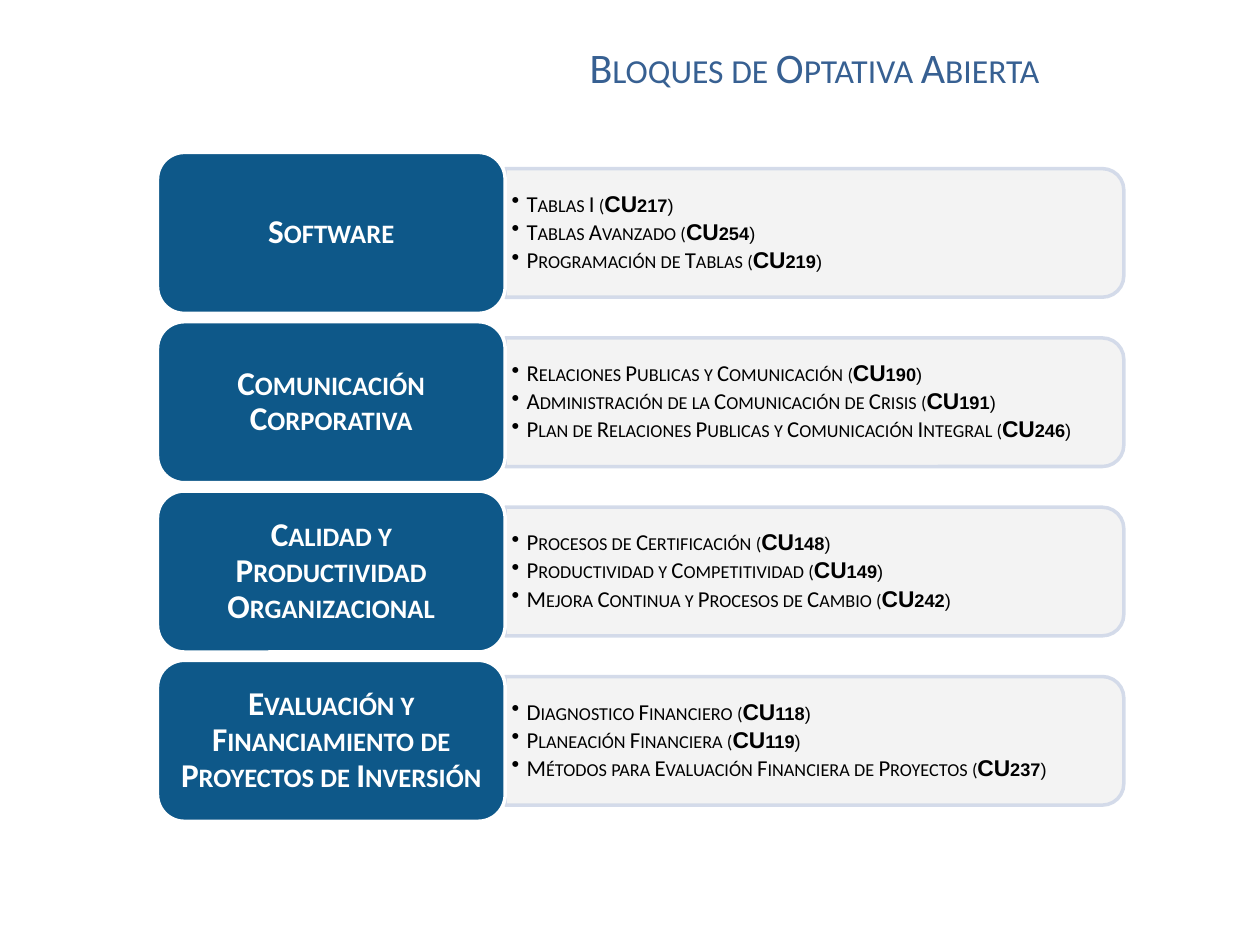
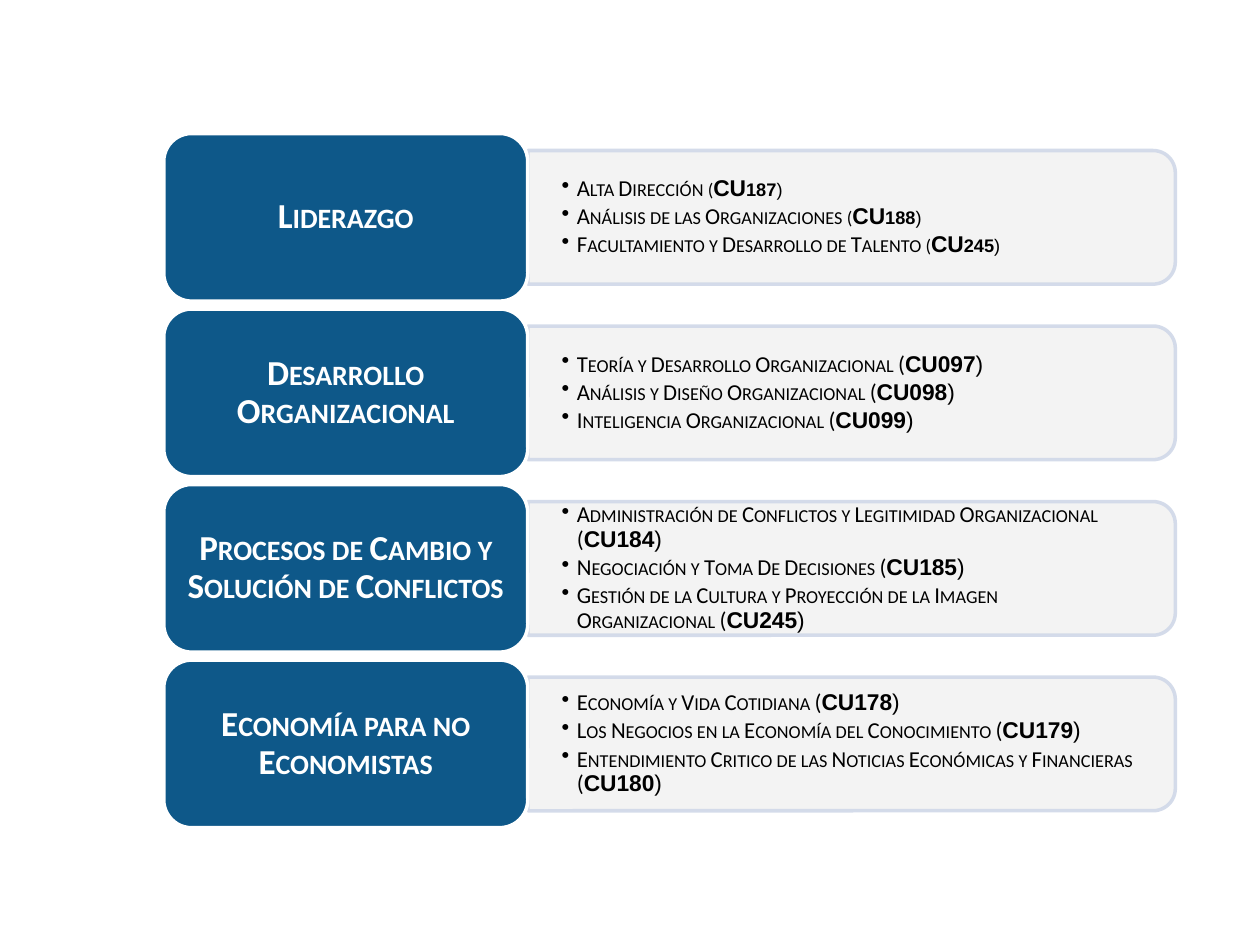
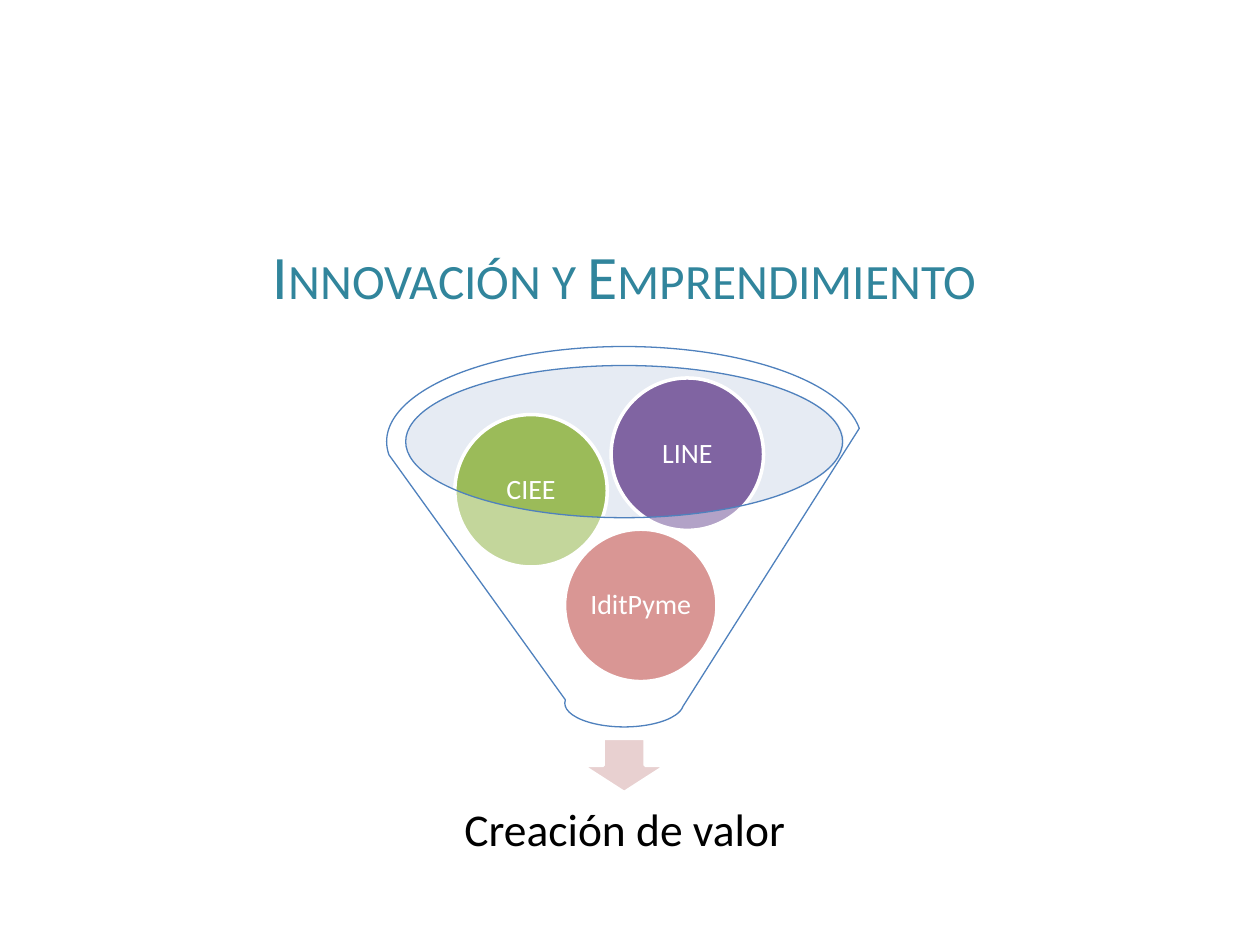
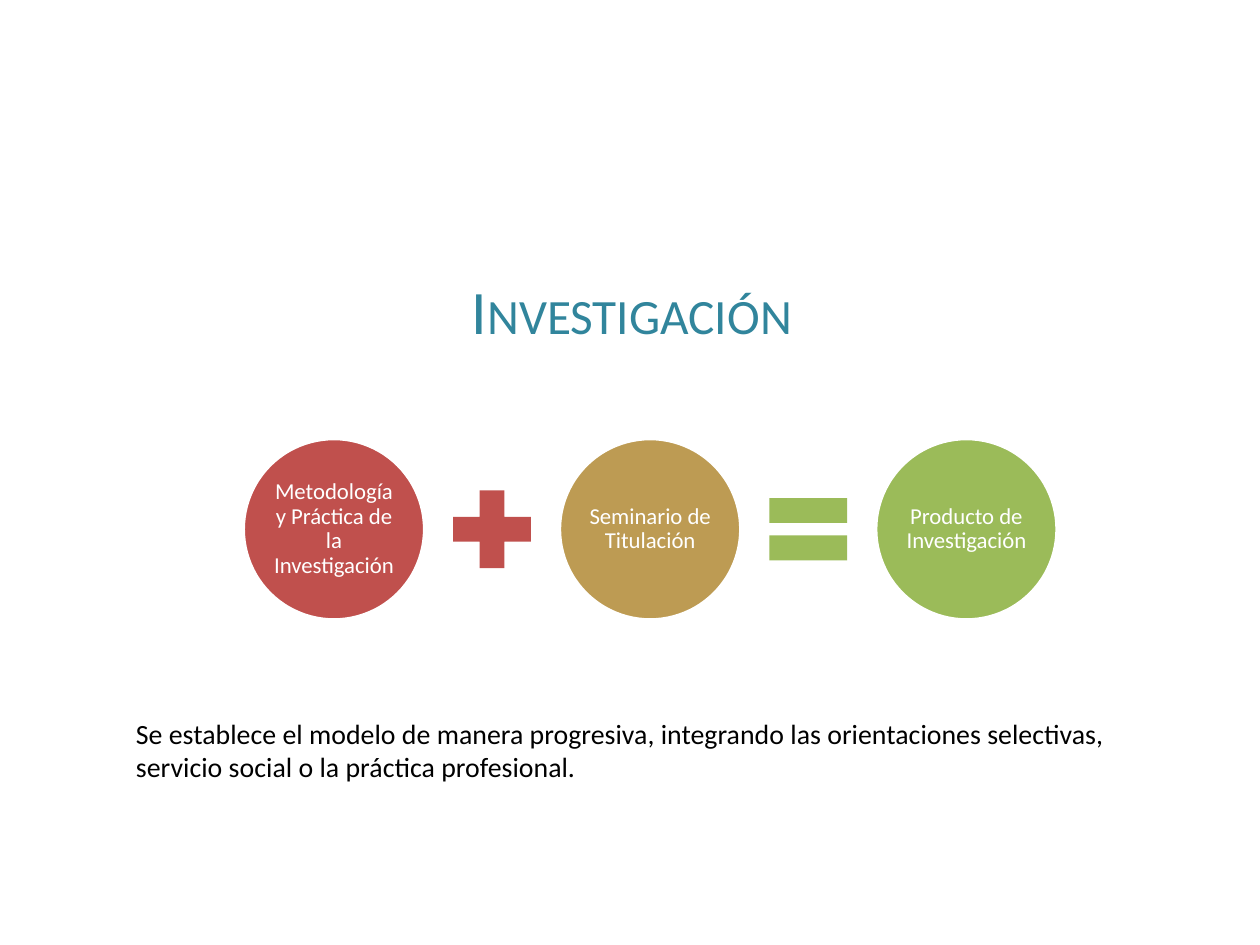
from dataclasses import dataclass
from typing import Optional

from lxml.etree import SubElement
from pptx import Presentation
from pptx.dml.color import RGBColor
from pptx.enum.shapes import MSO_SHAPE
from pptx.enum.text import MSO_ANCHOR, MSO_AUTO_SIZE, PP_ALIGN
from pptx.oxml.ns import qn
from pptx.util import Pt

COLORS = {
    "white": "FFFFFF",
    "black": "000000",
    "navy": "0E5889",
    "panel": "F2F2F2",
    "panel_edge": "D0D8E8",
    "title_blue": "376092",
    "title_teal": "31859C",
    "funnel_mouth": "C2CDE1",
    "funnel_edge": "4F81BD",
    "arrow": "E8D0D0",
    "red": "C0504D",
    "green": "9BBB59",
    "purple": "8064A2",
    "gold": "BD9B53",
}
TITLE_ONLY, BLANK = 5, 6
INDENT = 8.64


@dataclass(frozen=True)
class Box:
    left: float
    top: float
    width: float
    height: float

    def points(self) -> tuple:
        return Pt(self.left), Pt(self.top), Pt(self.width), Pt(self.height)


@dataclass(frozen=True)
class Paint:
    fill: str
    line: Optional[str] = None
    weight: float = 2
    opacity: int = 100
    line_opacity: int = 100


@dataclass(frozen=True)
class Font:
    size: float
    color: str
    bold: bool = False
    small_caps: bool = False
    name: str = "Calibri"


@dataclass(frozen=True)
class Block:
    heading: str
    courses: tuple
    small_codes: bool = True


@dataclass(frozen=True)
class BlockGrid:
    left: float
    top: float
    pitch: float
    heading_width: float
    heading_height: float
    panel_width: float
    panel_height: float
    list_width: float
    list_height: float
    inset_x: float
    inset_y: float
    heading_size: float


@dataclass(frozen=True)
class Circle:
    text: str
    left: float
    top: float
    color: str


OPEN_GRID = BlockGrid(90, 87.1, 96.75, 198.7, 92, 353.5, 73.5, 350, 66.3, 3.6, 2.2, 19)
SECOND_GRID = BlockGrid(93.6, 76.3, 100.3, 208, 95.8, 370, 76.4, 366.5, 69.1, 19.4, 10, 20)

OPEN_BLOCKS = (
    Block("Software", (
        ("Tablas I", "CU217"),
        ("Tablas Avanzado", "CU254"),
        ("Programación de Tablas", "CU219"),
    )),
    Block("Comunicación Corporativa", (
        ("Relaciones Publicas y Comunicación", "CU190"),
        ("Administración de la Comunicación de Crisis", "CU191"),
        ("Plan de Relaciones Publicas y Comunicación Integral", "CU246"),
    )),
    Block("Calidad y Productividad Organizacional", (
        ("Procesos de Certificación", "CU148"),
        ("Productividad y Competitividad", "CU149"),
        ("Mejora Continua y Procesos de Cambio", "CU242"),
    )),
    Block("Evaluación y Financiamiento de Proyectos de Inversión", (
        ("Diagnostico Financiero", "CU118"),
        ("Planeación Financiera", "CU119"),
        ("Métodos para Evaluación Financiera de Proyectos", "CU237"),
    )),
)
SECOND_BLOCKS = (
    Block("Liderazgo", (
        ("Alta Dirección", "CU187"),
        ("Análisis de las Organizaciones", "CU188"),
        ("Facultamiento y Desarrollo de Talento", "CU245"),
    )),
    Block("Desarrollo Organizacional", (
        ("Teoría y Desarrollo Organizacional", "CU097"),
        ("Análisis y Diseño Organizacional", "CU098"),
        ("Inteligencia Organizacional", "CU099"),
    ), small_codes=False),
    Block("Procesos de Cambio y Solución de Conflictos", (
        ("Administración de Conflictos y Legitimidad Organizacional", "CU184"),
        ("Negociación y Toma De Decisiones", "CU185"),
        ("Gestión de la Cultura y Proyección de la Imagen Organizacional", "CU245"),
    ), small_codes=False),
    Block("Economía para no Economistas", (
        ("Economía y Vida Cotidiana", "CU178"),
        ("Los Negocios en la Economía del Conocimiento", "CU179"),
        ("Entendimiento Critico de las Noticias Económicas y Financieras", "CU180"),
    ), small_codes=False),
)
FUNNEL_CIRCLES = (
    Circle("IditPyme", 322.6, 302.4, "red"),
    Circle("CIEE", 259.9, 236.9, "green"),
    Circle("LINE", 349.2, 216, "purple"),
)
RESEARCH_STEPS = (
    ("Metodología y Práctica de la Investigación", "red"),
    ("Seminario de Titulación", "gold"),
    ("Producto de Investigación", "green"),
)
OPERATORS = ((MSO_SHAPE.MATH_PLUS, "red"), (MSO_SHAPE.MATH_EQUAL, "green"))


def rgb(name: str) -> RGBColor:
    return RGBColor.from_string(COLORS[name])


def fade(parent, percent: int) -> None:
    if percent < 100:
        color = parent.find(qn("a:solidFill")).find(qn("a:srgbClr"))
        SubElement(color, qn("a:alpha"), val=str(percent * 1000))


def draw_shape(page, kind, box: Box, paint: Paint):
    shape = page.shapes.add_shape(kind, *box.points())
    shape.shadow.inherit = False
    shape.fill.solid()
    shape.fill.fore_color.rgb = rgb(paint.fill)
    properties = shape._element.spPr
    fade(properties, paint.opacity)
    if paint.line is None:
        shape.line.fill.background()
    else:
        shape.line.color.rgb = rgb(paint.line)
        shape.line.width = Pt(paint.weight)
        fade(properties.find(qn("a:ln")), paint.line_opacity)
    return shape


def format_span(span, font: Font) -> None:
    span.font.name = font.name
    span.font.size = Pt(font.size)
    span.font.bold = font.bold
    span.font.color.rgb = rgb(font.color)
    if font.small_caps:
        span._r.get_or_add_rPr().set("cap", "small")


def prepare_frame(frame, inset_x: float, inset_y: float, anchor=MSO_ANCHOR.MIDDLE) -> None:
    frame.word_wrap = True
    frame.auto_size = MSO_AUTO_SIZE.NONE
    frame.vertical_anchor = anchor
    frame.margin_left = frame.margin_right = Pt(inset_x)
    frame.margin_top = frame.margin_bottom = Pt(inset_y)


def write_text(shape, text: str, font: Font, inset_x: float, inset_y: float,
               spacing: float = 0.9) -> None:
    frame = shape.text_frame
    prepare_frame(frame, inset_x, inset_y)
    frame.text = text
    para = frame.paragraphs[0]
    para.alignment = PP_ALIGN.CENTER
    para.line_spacing = spacing
    format_span(para.runs[0], font)


def set_title(page, text: str, box: Box, font: Font, top_inset: float = 3.6) -> None:
    title = page.shapes.title
    title.left, title.top, title.width, title.height = box.points()
    write_text(title, text, font, 7.2, 3.6, 1.0)
    title.text_frame.margin_top = Pt(top_inset)


def write_course(para, name: str, code: str, small_codes: bool) -> None:
    properties = para._p.get_or_add_pPr()
    properties.set("marL", str(Pt(INDENT)))
    properties.set("indent", str(-Pt(INDENT)))
    SubElement(properties, qn("a:buChar"), char="•")
    para.line_spacing = 0.9
    para.space_after = Pt(2)
    pieces = (
        (f"{name} ", Font(13, "black", small_caps=True)),
        ("(", Font(13, "black", small_caps=small_codes)),
        (code, Font(13, "black", True, small_codes, "Arial")),
        (")", Font(13, "black", False, small_codes, "Arial")),
    )
    for text, font in pieces:
        span = para.add_run()
        span.text = text
        format_span(span, font)


def draw_block(page, block: Block, grid: BlockGrid, top: float) -> None:
    middle = top + grid.heading_height / 2
    panel_left = grid.left + grid.heading_width
    panel = draw_shape(
        page, MSO_SHAPE.ROUND_2_SAME_RECTANGLE,
        Box(panel_left + (grid.panel_width - grid.panel_height) / 2,
            middle - grid.panel_width / 2, grid.panel_height, grid.panel_width),
        Paint("panel", "panel_edge", opacity=90, line_opacity=90))
    panel.rotation = 90
    list_box = Box(panel_left, middle - grid.list_height / 2, grid.list_width, grid.list_height)
    frame = page.shapes.add_textbox(*list_box.points()).text_frame
    prepare_frame(frame, grid.inset_x, grid.inset_y)
    for index, (name, code) in enumerate(block.courses):
        para = frame.add_paragraph() if index else frame.paragraphs[0]
        write_course(para, name, code, block.small_codes)
    heading = draw_shape(
        page, MSO_SHAPE.ROUNDED_RECTANGLE,
        Box(grid.left, top, grid.heading_width, grid.heading_height), Paint("navy", "white"))
    write_text(heading, block.heading, Font(grid.heading_size, "white", True, True), 5.8, 2.9)


def draw_blocks(page, blocks: tuple, grid: BlockGrid) -> None:
    for index, block in enumerate(blocks):
        draw_block(page, block, grid, grid.top + index * grid.pitch)


def draw_circle(page, circle: Circle, diameter: float, size: float) -> None:
    shape = draw_shape(page, MSO_SHAPE.OVAL,
                       Box(circle.left, circle.top, diameter, diameter),
                       Paint(circle.color, "white"))
    write_text(shape, circle.text, Font(size, "white"), 1.4, 1.4)


def add_page(deck, layout: int):
    return deck.slides.add_slide(deck.slide_layouts[layout])


def build_open_blocks(deck) -> None:
    page = add_page(deck, TITLE_ONLY)
    draw_blocks(page, OPEN_BLOCKS, OPEN_GRID)
    set_title(page, "Bloques de Optativa Abierta", Box(288.7, 20.2, 353.5, 36),
              Font(24, "title_blue", small_caps=True))


def build_second_blocks(deck) -> None:
    draw_blocks(add_page(deck, BLANK), SECOND_BLOCKS, SECOND_GRID)


def build_innovation(deck) -> None:
    page = add_page(deck, TITLE_ONLY)
    set_title(page, "Innovación y Emprendimiento", Box(87.1, 128.2, 540, 50.4),
              Font(35.3, "title_teal", small_caps=True), 10.9)
    draw_shape(page, MSO_SHAPE.OVAL, Box(231.8, 208.8, 250.6, 87.1),
               Paint("funnel_mouth", opacity=40))
    draw_shape(page, MSO_SHAPE.DOWN_ARROW, Box(332.6, 421.9, 48.2, 31),
               Paint("arrow", "white"))
    result = page.shapes.add_textbox(*Box(240.5, 446.4, 233.3, 58.3).points())
    write_text(result, "Creación de valor", Font(26, "black"), 14.4, 14.4)
    for circle in FUNNEL_CIRCLES:
        draw_circle(page, circle, 87.1, 16)
    draw_shape(page, MSO_SHAPE.FUNNEL, Box(221, 198, 271.4, 217.4),
               Paint("white", "funnel_edge", 0.75, opacity=40))


def build_research(deck) -> None:
    page = add_page(deck, TITLE_ONLY)
    set_title(page, "Investigación", Box(183.6, 148.3, 355, 50.4),
              Font(35.3, "title_teal", small_caps=True), 10.9)
    left, top, pitch, diameter, operator_size = 139, 250.6, 180.7, 103.7, 60.5
    for index, (text, color) in enumerate(RESEARCH_STEPS):
        draw_circle(page, Circle(text, left + index * pitch, top, color), diameter, 13)
    operator_left = left + (pitch + diameter - operator_size) / 2
    operator_top = top + (diameter - operator_size) / 2
    for index, (kind, color) in enumerate(OPERATORS):
        draw_shape(page, kind, Box(operator_left + index * pitch, operator_top,
                                   operator_size, operator_size), Paint(color))
    frame = page.shapes.add_textbox(*Box(70.6, 406, 581, 46).points()).text_frame
    prepare_frame(frame, 7.2, 3.6, MSO_ANCHOR.TOP)
    frame.text = ("Se establece el modelo de manera progresiva, integrando las orientaciones "
                  "selectivas, servicio social o la práctica profesional.")
    format_span(frame.paragraphs[0].runs[0], Font(15.9, "black"))


def main() -> None:
    deck = Presentation()
    deck.slide_width, deck.slide_height = Pt(720), Pt(540)
    build_open_blocks(deck)
    build_second_blocks(deck)
    build_innovation(deck)
    build_research(deck)
    deck.save("out.pptx")


if __name__ == "__main__":
    main()
